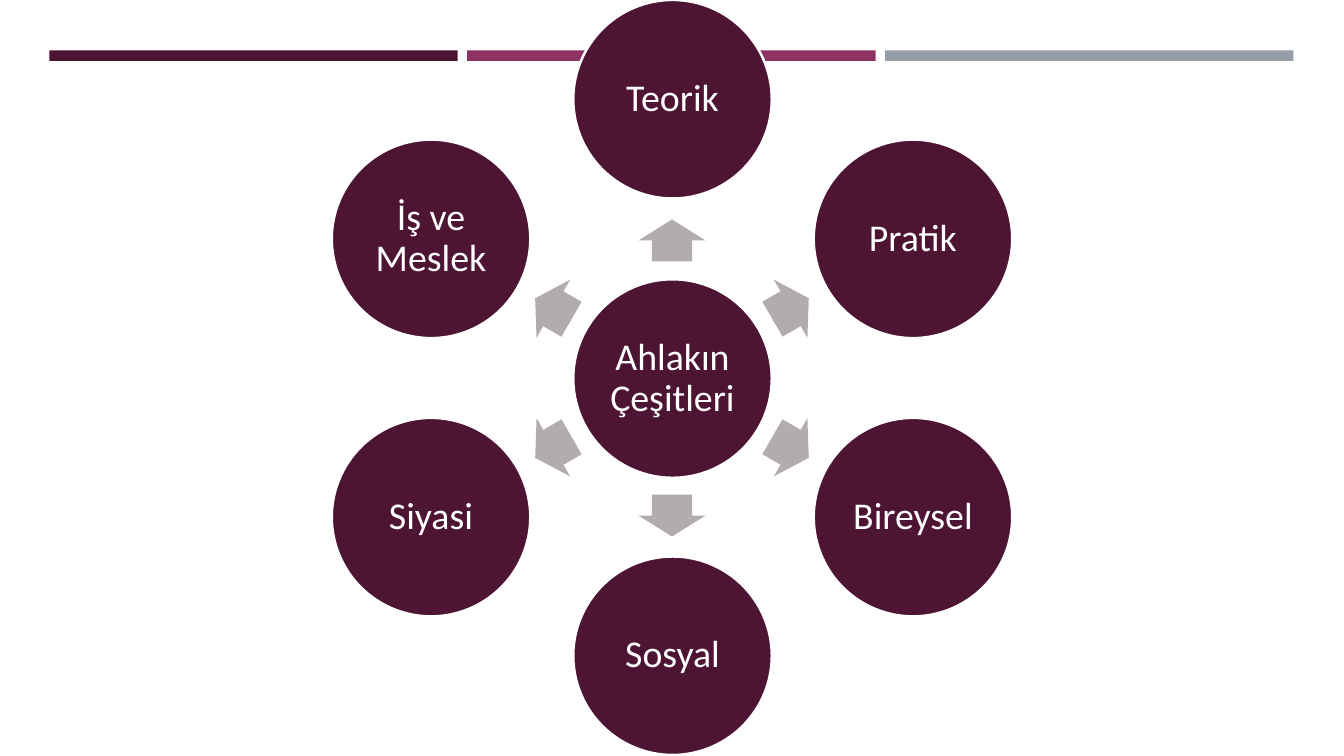
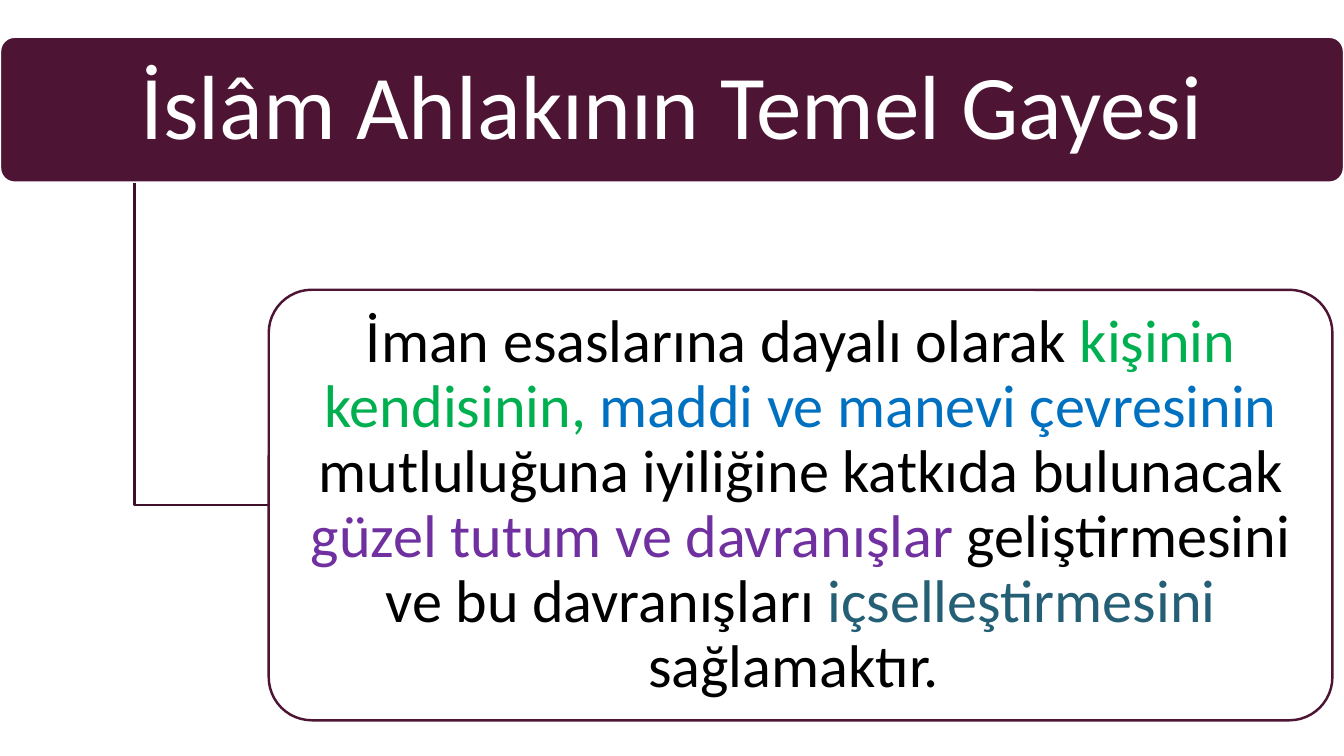
from dataclasses import dataclass
from math import cos, radians, sin
from typing import NamedTuple

from lxml import etree
from pptx import Presentation
from pptx.dml.color import RGBColor
from pptx.enum.shapes import MSO_SHAPE
from pptx.enum.text import MSO_ANCHOR, PP_ALIGN
from pptx.oxml.ns import qn
from pptx.shapes.autoshape import Shape
from pptx.slide import Slide
from pptx.util import Emu, Pt

RECTANGLE = MSO_SHAPE.RECTANGLE
ELLIPSE = MSO_SHAPE.OVAL
ROUNDED = MSO_SHAPE.ROUNDED_RECTANGLE
ARROW = MSO_SHAPE.RIGHT_ARROW
MIDDLE = MSO_ANCHOR.MIDDLE
CENTER = PP_ALIGN.CENTER

EMU_PER_PX = 9525
SLIDE_WIDTH, SLIDE_HEIGHT = 1280, 720
BLANK_LAYOUT = 6


@dataclass(frozen=True)
class Theme:
    font: str = "Calibri"
    plum: str = "4D1434"
    magenta: str = "903163"
    slate: str = "969FA7"
    arrow: str = "B2ACAE"
    connector: str = "3E102A"
    white: str = "FFFFFF"
    black: str = "000000"
    green: str = "00B050"
    blue: str = "0070C0"
    purple: str = "7030A0"
    teal: str = "255F75"
    circle_size: int = 27
    heading_size: int = 65
    body_size: int = 43
    line_width: float = 1.75
    line_spacing: float = 0.9


THEME = Theme()


class Box(NamedTuple):
    left: int
    top: int
    width: int
    height: int


class TextRun(NamedTuple):
    text: str
    color: str


def px(length: int) -> Emu:
    return Emu(length * EMU_PER_PX)


def centered_box(x: float, y: float, width: int, height: int) -> Box:
    return Box(round(x - width / 2), round(y - height / 2), width, height)


def set_line(shape: Shape, color: str) -> None:
    shape.line.color.rgb = RGBColor.from_string(color)
    shape.line.width = Pt(THEME.line_width)


def add_filled_shape(slide: Slide, kind: MSO_SHAPE, box: Box, fill: str,
                     line: str | None = None,
                     adjustments: tuple[float, ...] = ()) -> Shape:
    shape = slide.shapes.add_shape(kind, *map(px, box))
    shape.shadow.inherit = False
    shape.fill.solid()
    shape.fill.fore_color.rgb = RGBColor.from_string(fill)
    if line:
        set_line(shape, line)
    else:
        shape.line.fill.background()
    for index, value in enumerate(adjustments):
        shape.adjustments[index] = value
    return shape


def write_text(shape: Shape, runs: list[TextRun], size: int,
               side_inset: int, end_inset: int) -> None:
    frame = shape.text_frame
    frame.word_wrap = True
    frame.vertical_anchor = MIDDLE
    frame.margin_left = frame.margin_right = px(side_inset)
    frame.margin_top = frame.margin_bottom = px(end_inset)
    paragraph = frame.paragraphs[0]
    paragraph.alignment = CENTER
    paragraph.line_spacing = THEME.line_spacing
    for text, color in runs:
        run = paragraph.add_run()
        run.text = text
        run.font.name = THEME.font
        run.font.size = Pt(size)
        run.font.color.rgb = RGBColor.from_string(color)


def set_opacity(shape: Shape, percent: int) -> None:
    color = shape.fill._xPr.find(qn("a:solidFill"))[0]
    etree.SubElement(color, qn("a:alpha")).set("val", str(percent * 1000))


def add_top_bars(slide: Slide) -> None:
    left, step = 47, 398
    for index, color in enumerate((THEME.plum, THEME.magenta, THEME.slate)):
        add_filled_shape(slide, RECTANGLE, Box(left + index * step, 48, 389, 10), color)


def add_circle(slide: Slide, x: float, y: float, label: str) -> None:
    diameter = 189
    circle = add_filled_shape(slide, ELLIPSE, centered_box(x, y, diameter, diameter),
                              THEME.plum, THEME.white)
    write_text(circle, [TextRun(label, THEME.white)], THEME.circle_size, 4, 4)


def build_types_slide(slide: Slide) -> None:
    add_top_bars(slide)
    center_x, center_y = SLIDE_WIDTH / 2, SLIDE_HEIGHT / 2
    circle_distance, arrow_distance = 265, 131
    labels = ("Teorik", "Pratik", "Bireysel", "Sosyal", "Siyasi", "İş ve Meslek")
    add_circle(slide, center_x, center_y, "Ahlakın Çeşitleri")
    for index, label in enumerate(labels):
        degrees = (270 + index * 360 / len(labels)) % 360
        across, down = cos(radians(degrees)), sin(radians(degrees))
        arrow_box = centered_box(center_x + arrow_distance * across,
                                 center_y + arrow_distance * down, 40, 64)
        arrow = add_filled_shape(slide, ARROW, arrow_box, THEME.arrow,
                                 adjustments=(0.6, 0.5))
        arrow.rotation = degrees
        add_circle(slide, center_x + circle_distance * across,
                   center_y + circle_distance * down, label)


def add_elbow(slide: Slide, start: tuple[int, int], end: tuple[int, int]) -> None:
    builder = slide.shapes.build_freeform(*start, scale=EMU_PER_PX)
    builder.add_line_segments([(start[0], end[1]), end], close=False)
    elbow = builder.convert_to_shape()
    elbow.shadow.inherit = False
    elbow.fill.background()
    set_line(elbow, THEME.connector)


def build_purpose_slide(slide: Slide) -> None:
    heading_box = Box(0, 35, SLIDE_WIDTH, 139)
    body_box = Box(256, 276, 1013, 410)
    heading = add_filled_shape(slide, ROUNDED, heading_box, THEME.plum,
                               THEME.white, (0.1,))
    write_text(heading, [TextRun("İslâm Ahlakının Temel Gayesi", THEME.white)],
               THEME.heading_size, 13, 9)
    add_elbow(slide, (128, heading_box.top + heading_box.height),
              (body_box.left, body_box.top + body_box.height // 2))
    body = add_filled_shape(slide, ROUNDED, body_box, THEME.white, THEME.plum, (0.1,))
    set_opacity(body, 90)
    write_text(body, [
        TextRun("İman esaslarına dayalı olarak ", THEME.black),
        TextRun("kişinin kendisinin, ", THEME.green),
        TextRun("maddi ve manevi çevresinin ", THEME.blue),
        TextRun("mutluluğuna iyiliğine katkıda bulunacak ", THEME.black),
        TextRun("güzel tutum ve davranışlar ", THEME.purple),
        TextRun("geliştirmesini ve bu davranışları ", THEME.black),
        TextRun("içselleştirmesini", THEME.teal),
        TextRun(" sağlamaktır. ", THEME.black),
    ], THEME.body_size, 9, 6)


def main() -> None:
    presentation = Presentation()
    presentation.slide_width = px(SLIDE_WIDTH)
    presentation.slide_height = px(SLIDE_HEIGHT)
    layout = presentation.slide_layouts[BLANK_LAYOUT]
    for build in (build_types_slide, build_purpose_slide):
        build(presentation.slides.add_slide(layout))
    presentation.save("out.pptx")


if __name__ == "__main__":
    main()
